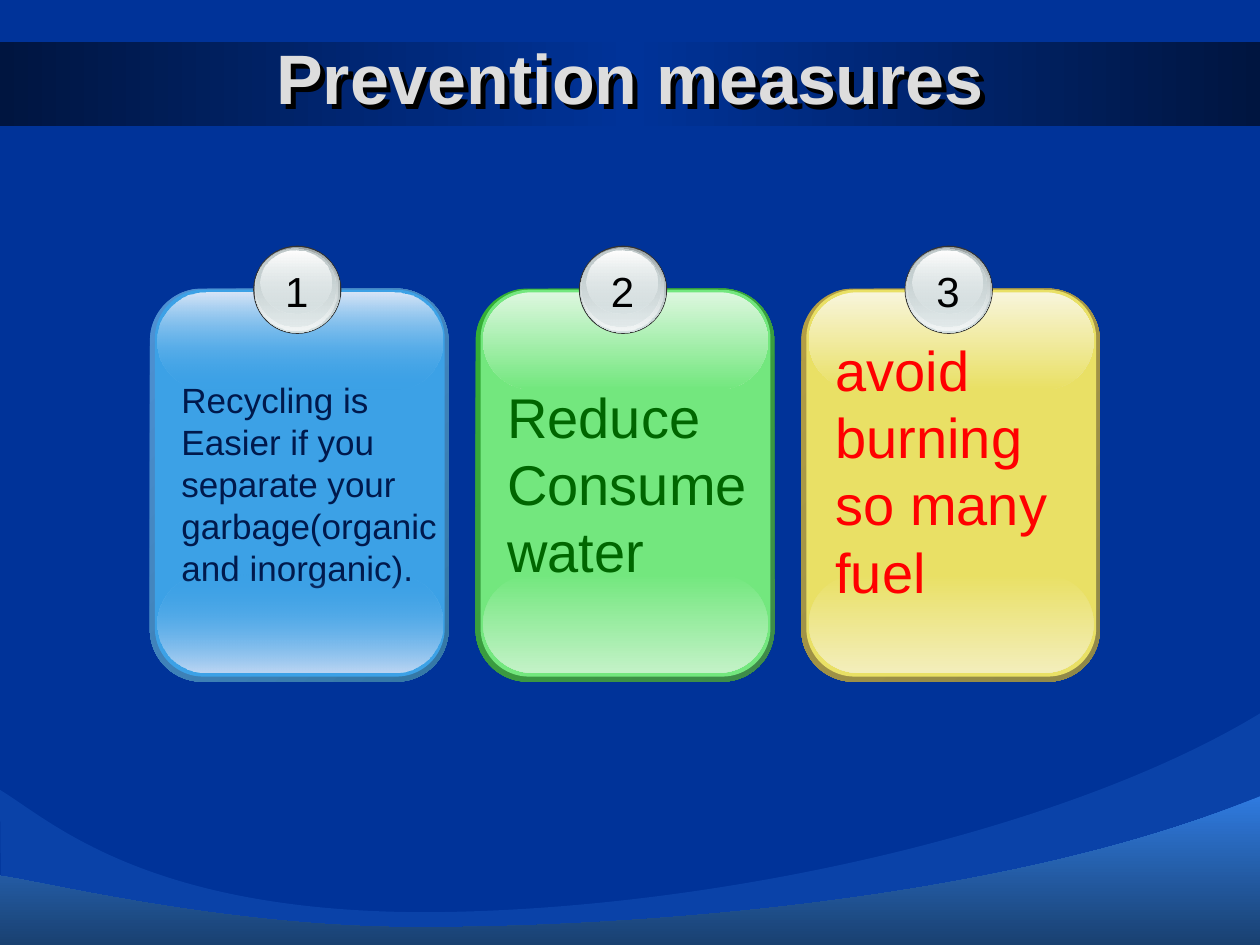
from lxml import etree
from pptx import Presentation
from pptx import util as u
from pptx.dml.color import RGBColor
from pptx.enum import shapes, text
from pptx.oxml import ns

Inches, Pt, MSO = u.Inches, u.Pt, shapes.MSO_SHAPE
LEFT, CENTER = text.PP_ALIGN.LEFT, text.PP_ALIGN.CENTER
TOP, MIDDLE = text.MSO_ANCHOR.TOP, text.MSO_ANCHOR.MIDDLE
FONT = "Arial"
BLUE = RGBColor(0x00, 0x33, 0x99)
NAVY = RGBColor(0x00, 0x15, 0x40)
SKY = RGBColor(0x2F, 0x7A, 0xDF)
DEEP_SKY = RGBColor(0x19, 0x40, 0x6F)
TITLE = RGBColor(0xDD, 0xDD, 0xDD)
BLACK = RGBColor(0x00, 0x00, 0x00)
WHITE = RGBColor(0xFF, 0xFF, 0xFF)
CHARCOAL = RGBColor(0x33, 0x33, 0x33)
STEEL = RGBColor(0x99, 0xA1, 0xA2)
SILVER = RGBColor(0xD6, 0xE1, 0xE2)
PEARL = RGBColor(0xF2, 0xF5, 0xF5)
ASH = RGBColor(0xC1, 0xCB, 0xCC)

CARDS = [
    dict(words="Recycling is\nEaser".replace("Easer", "Easier if you")
         + "\nseparate your\ngarbage(organic\nand inorganic).",
         size=20, color=RGBColor(0x00, 0x19, 0x4C), on_gloss=False, inner_alpha=0,
         edge=(RGBColor(0x4E, 0x91, 0xD4), RGBColor(0x34, 0x77, 0xA4)),
         body=RGBColor(0x3C, 0xA1, 0xE6),
         top=RGBColor(0xD7, 0xE5, 0xF7), bottom=RGBColor(0xBD, 0xD6, 0xF3)),
    dict(words="Reduce\nConsume\nwater",
         size=32, color=RGBColor(0x00, 0x66, 0x00), on_gloss=False, inner_alpha=100,
         edge=(RGBColor(0x34, 0xB0, 0x34), RGBColor(0x3F, 0x8B, 0x4A)),
         body=RGBColor(0x73, 0xE7, 0x7E),
         top=RGBColor(0xDD, 0xF7, 0xDF), bottom=RGBColor(0xC3, 0xF2, 0xC7)),
    dict(words="avoid\nburning\vso many\vfuel",
         size=32, color=RGBColor(0xFF, 0x00, 0x00), on_gloss=True, inner_alpha=100,
         edge=(RGBColor(0xB5, 0x9F, 0x43), RGBColor(0x8F, 0x88, 0x49)),
         body=RGBColor(0xE9, 0xE0, 0x65),
         top=RGBColor(0xF8, 0xF5, 0xDB), bottom=RGBColor(0xF3, 0xEE, 0xBB)),
]
CARDS[0]["words"] = ("Recycling is\nEasier if you\nseparate your\n"
                     "garbage(organic\nand inorganic).")
CARD_LEFT, CARD_STEP = 1.19, 2.585

BADGE = [
    ((0.82, 1.95, 0.7, 0.7), [(CHARCOAL, 100)]),
    ((0.83, 1.96, 0.68, 0.68), [(STEEL, 100), (SILVER, 100)]),
    ((0.83, 1.96, 0.66, 0.66), [(SILVER, 0), (PEARL, 100)]),
    ((0.84, 1.97, 0.63, 0.62), [(ASH, 100), (SILVER, 48)]),
    ((0.88, 1.99, 0.56, 0.5), [(WHITE, 100), (SILVER, 38)]),
]

BACK_WAVE = [(0.01, 7.51), (0, 6.27),
             [(0.4, 6.51), (1.16, 7.25), (3.43, 7.24)],
             [(5.7, 7.22), (8.49, 6.59), (10.02, 5.65)],
             (10.01, 7.51)]
FRONT_WAVE = [(0, 7.52), (-0.01, 6.95),
              [(0.36, 7), (1.86, 7.38), (3.46, 7.36)],
              [(5.06, 7.35), (7.97, 7.16), (10, 6.32)],
              (10, 7.52)]


def add_color(parent, color, alpha=100):
    clr = etree.SubElement(parent, ns.qn("a:srgbClr"), val=str(color))
    if alpha < 100:
        etree.SubElement(clr, ns.qn("a:alpha"), val=str(alpha * 1000))


def paint(sp, stops, angle=90):
    sp.shadow.inherit = False
    sp.line.fill.background()
    sp.fill.solid()
    solid = sp._element.spPr.find(ns.qn("a:solidFill"))
    if len(stops) == 1:
        add_color(solid, *stops[0])
        return
    grad = etree.Element(ns.qn("a:gradFill"), rotWithShape="1")
    gs_list = etree.SubElement(grad, ns.qn("a:gsLst"))
    for i, stop in enumerate(stops):
        pos = str(100000 * i // (len(stops) - 1))
        add_color(etree.SubElement(gs_list, ns.qn("a:gs"), pos=pos), *stop)
    etree.SubElement(grad, ns.qn("a:lin"), ang=str(angle * 60000), scaled="0")
    solid.getparent().replace(solid, grad)


def add_shape(s, kind, box, stops, angle=90, corner=None):
    sp = s.shapes.add_shape(kind, *map(Inches, box))
    if corner is not None:
        sp.adjustments[0] = corner
    paint(sp, stops, angle)
    return sp


def write(sp, words, size, color, align, anchor, spacing=None, bold=False):
    tf = sp.text_frame
    tf.word_wrap = False
    tf.vertical_anchor = anchor
    tf.text = words
    for p in tf.paragraphs:
        p.alignment = align
        p.line_spacing = spacing
        p.font.name, p.font.size, p.font.bold = FONT, Pt(size), bold
        p.font.color.rgb = color
    return tf


def add_wave(s, outline, stops):
    points, curve_starts = [], []
    for part in outline:
        if isinstance(part, list):
            curve_starts.append(len(points) - 1)
            points += part
        else:
            points.append(part)
    points = [(Inches(x), Inches(y)) for x, y in points]
    builder = s.shapes.build_freeform(*points[0])
    builder.add_line_segments(points[1:], close=True)
    sp = builder.convert_to_shape()
    segments = list(sp._element.iter(ns.qn("a:lnTo")))
    for start in curve_starts:
        curve = etree.Element(ns.qn("a:cubicBezTo"))
        segments[start].addprevious(curve)
        for segment in segments[start:start + 3]:
            curve.append(segment[0])
            segment.getparent().remove(segment)
    paint(sp, stops)


def add_title(s):
    sp = s.shapes.add_textbox(*map(Inches, (0.5, 0.3, 9, 0.62)))
    write(sp, "Prevention measures", 40, TITLE, CENTER, MIDDLE, bold=True)
    effects = etree.SubElement(sp._element.spPr, ns.qn("a:effectLst"))
    shadow = etree.SubElement(effects, ns.qn("a:outerShdw"),
                              dist="50800", dir="2700000", algn="ctr")
    add_color(shadow, BLACK)


def add_card(s, number, card):
    x = CARD_LEFT + (number - 1) * CARD_STEP
    inner = (card["body"], card["inner_alpha"])
    add_shape(s, MSO.ROUNDED_RECTANGLE, (x, 2.29, 2.37, 3.12),
              [(c, 100) for c in card["edge"]], 45, 0.175)
    body = add_shape(s, MSO.ROUNDED_RECTANGLE, (x + 0.04, 2.3, 2.3, 3.07),
                     [(card["body"], 100)], corner=0.167)
    add_shape(s, MSO.ROUNDED_RECTANGLE, (x + 0.06, 4.56, 2.26, 0.78),
              [inner, (card["bottom"], 100)], corner=0.5)
    gloss = add_shape(s, MSO.ROUNDED_RECTANGLE, (x + 0.06, 2.32, 2.26, 0.77),
                      [(card["top"], 100), inner], corner=0.5)
    holder, anchor = (gloss, TOP) if card["on_gloss"] else (body, MIDDLE)
    tf = write(holder, card["words"], card["size"], card["color"], LEFT, anchor,
               Pt(card["size"] * 1.2))
    if card["on_gloss"]:
        tf.margin_top, tf.margin_bottom = Inches(0.23), 0
    for (dx, y, w, h), stops in BADGE:
        add_shape(s, MSO.OVAL, (x + dx, y, w, h), stops)
    label = s.shapes.add_textbox(*map(Inches, (x + 0.97, 2.06, 0.39, 0.5)))
    write(label, str(number), 24, BLACK, CENTER, MIDDLE)


def main():
    prs = Presentation()
    prs.slide_width, prs.slide_height = Inches(10), Inches(7.5)
    s = prs.slides.add_slide(prs.slide_layouts[6])
    s.background.fill.solid()
    s.background.fill.fore_color.rgb = BLUE
    add_shape(s, MSO.RECTANGLE, (0, 0.33, 10, 0.67),
              [(NAVY, 100), (BLUE, 100), (NAVY, 100)], 0)
    add_wave(s, BACK_WAVE, [(SKY, 22)])
    add_wave(s, FRONT_WAVE, [(SKY, 100), (DEEP_SKY, 100)])
    add_title(s)
    for number, card in enumerate(CARDS, 1):
        add_card(s, number, card)
    prs.save("out.pptx")


if __name__ == "__main__":
    main()
